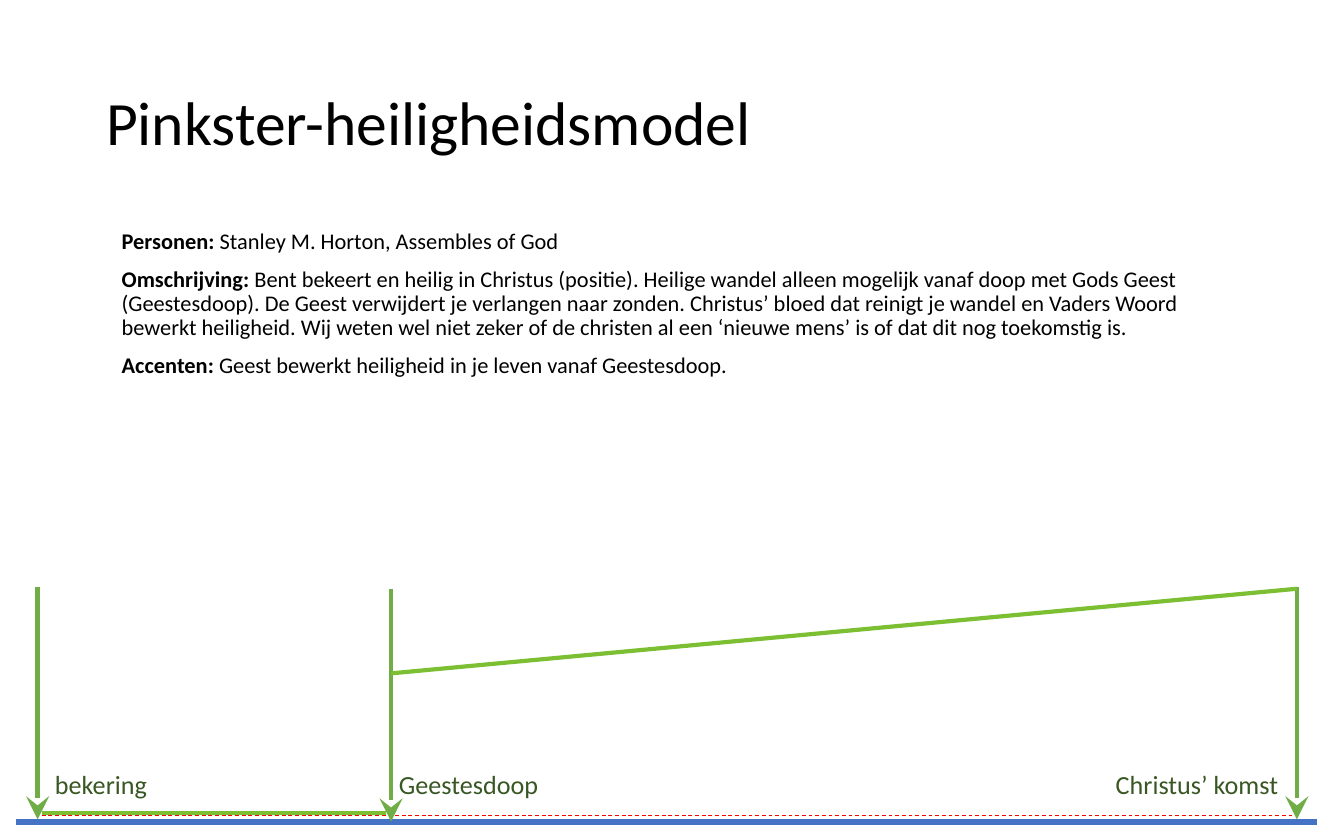
from dataclasses import dataclass

from lxml.etree import SubElement
from pptx import Presentation
from pptx.dml.color import RGBColor as Rgb
from pptx.enum.dml import MSO_LINE_DASH_STYLE as Dash
from pptx.enum.shapes import MSO_CONNECTOR as Connector
from pptx.enum.text import MSO_ANCHOR as Anchor, MSO_AUTO_SIZE as AutoSize, PP_ALIGN as Align
from pptx.oxml.ns import qn
from pptx.util import Cm, Pt


@dataclass(frozen=True)
class Theme:
    font: str = "Calibri"
    text: str = "000000"
    label: str = "385723"
    event: str = "70AD47"
    growth: str = "7CBF33"
    axis: str = "4472C4"
    dashed: str = "FF0000"
    title_size: float = 33
    body_size: float = 12
    label_size: float = 14


theme = Theme()


def write(para, text, size=theme.body_size, color=theme.text, bold=False,
          align=Align.LEFT, spacing=None, before=None, indent=None):
    span = para.add_run()
    span.text = text
    span.font.name, span.font.size, span.font.bold = theme.font, Pt(size), bold
    span.font.color.rgb = Rgb.from_string(color)
    para.alignment = align
    if spacing is not None:
        para.line_spacing = spacing
    if before is not None:
        para.space_before = Pt(before)
    if indent is not None:
        para._p.get_or_add_pPr().set("marL", str(Cm(indent)))


def draw_line(start, end, color, width, dash=None, arrow=False):
    line = page.shapes.add_connector(Connector.STRAIGHT, *map(Cm, start + end))
    line.line.color.rgb = Rgb.from_string(color)
    line.line.width = Pt(width)
    if dash is not None:
        line.line.dash_style = dash
    if arrow:
        SubElement(line.line._get_or_add_ln(), qn("a:tailEnd"), type="stealth", w="lg", len="lg")
    SubElement(line._element.spPr, qn("a:effectLst"))


deck = Presentation()
deck.slide_width, deck.slide_height = Cm(25.4), Cm(15.88)
page = deck.slides.add_slide(deck.slide_layouts[5])

# Title
title = page.shapes.title
title.left, title.top, title.width, title.height = Cm(1.75), Cm(0.84), Cm(21.9), Cm(3.07)
title.text_frame.vertical_anchor = Anchor.MIDDLE
title.text_frame.auto_size = AutoSize.NONE
write(title.text_frame.paragraphs[0], "Pinkster-heiligheidsmodel",
      size=theme.title_size, spacing=0.9)

# Description
sections = [
    ("Personen: ", "Stanley M. Horton, Assembles of God"),
    ("Omschrijving:",
     " Bent bekeert en heilig in Christus (positie). Heilige wandel alleen mogelijk vanaf "
     "doop met Gods Geest (Geestesdoop). De Geest verwijdert je verlangen naar zonden. "
     "Christus’ bloed dat reinigt je wandel en Vaders Woord bewerkt heiligheid. Wij weten "
     "wel niet zeker of de christen al een ‘nieuwe mens’ is of dat dit nog toekomstig is."),
    ("Accenten:", " Geest bewerkt heiligheid in je leven vanaf Geestesdoop."),
]
body = page.shapes.add_textbox(Cm(1.75), Cm(4.22), Cm(21.9), Cm(10.08)).text_frame
body.word_wrap = True
for index, (heading, detail) in enumerate(sections):
    para = body.add_paragraph() if index else body.paragraphs[0]
    for text, bold in ((heading, True), (detail, False)):
        write(para, text, bold=bold, spacing=0.9, before=7.5, indent=0.3)

# Timeline
conversion, baptism, coming = 0.71, 7.39, 24.51
event_top, event_bottom = 11.1, 15.49
draw_line((0.79, 15.42), (coming, 15.42), theme.dashed, 0.5, dash=Dash.DASH)
draw_line((0.79, 15.37), (7.29, 15.37), theme.growth, 2.5)
draw_line((0.3, 15.54), (24.89, 15.54), theme.axis, 3.5)
for x, drop in ((conversion, 0), (coming, 0), (baptism, 0.04)):
    draw_line((x, event_top + drop), (x, event_bottom + drop), theme.event, 2.5, arrow=True)
draw_line((baptism, 12.73), (coming, 11.13), theme.growth, 2.25)

# Event labels
labels = [
    ("bekering", 0.79, Align.LEFT),
    ("Geestesdoop", 7.29, Align.LEFT),
    ("Christus’ komst", 19.51, Align.RIGHT),
]
for text, left, align in labels:
    box = page.shapes.add_textbox(Cm(left), Cm(14.4), Cm(4.9), Cm(0.86))
    box.text_frame.word_wrap = True
    box.text_frame.auto_size = AutoSize.SHAPE_TO_FIT_TEXT
    write(box.text_frame.paragraphs[0], text, size=theme.label_size,
          color=theme.label, align=align)

deck.save("out.pptx")
